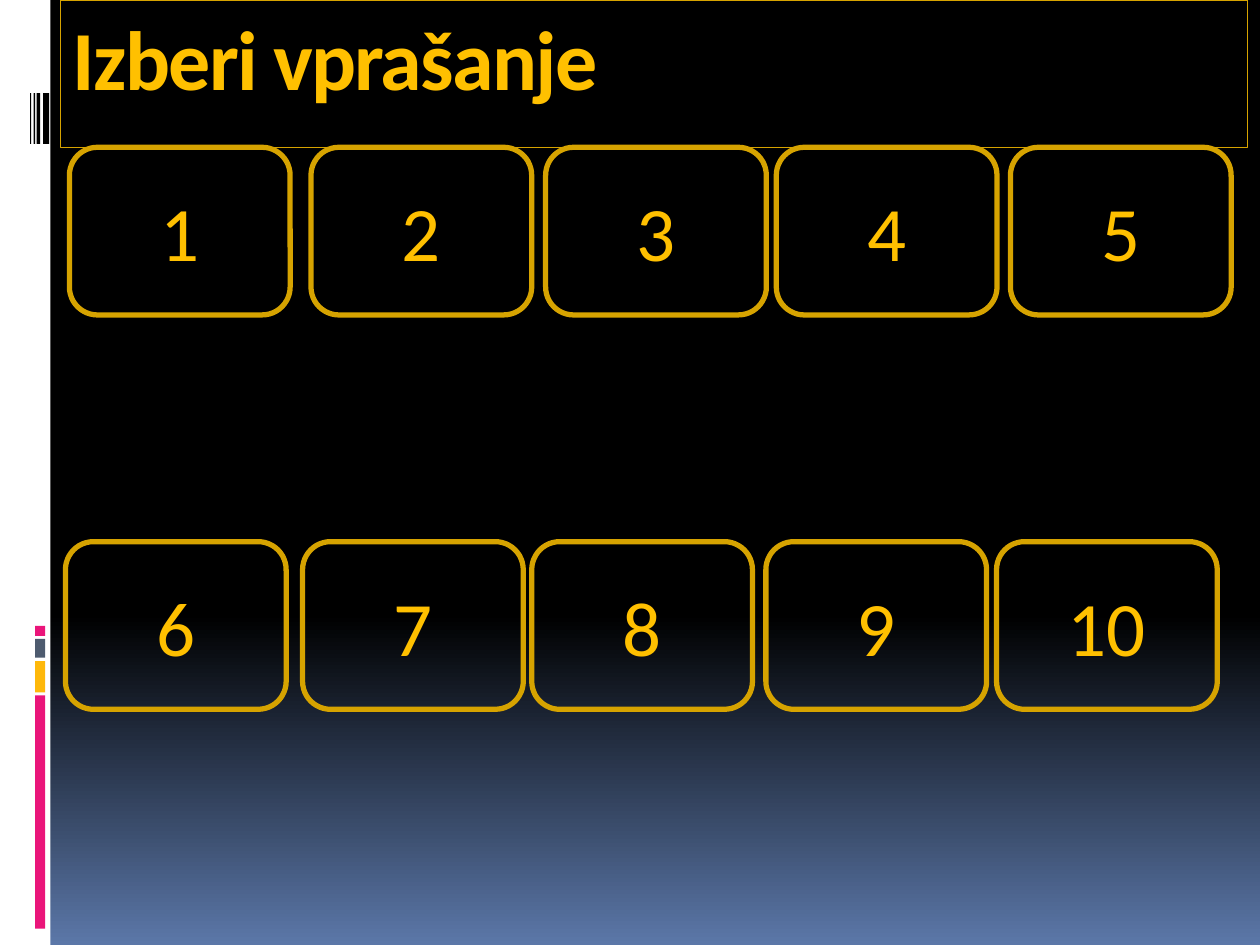
from pptx import Presentation
from pptx.dml.color import RGBColor
from pptx.enum.shapes import MSO_SHAPE
from pptx.enum.text import MSO_ANCHOR, PP_ALIGN
from pptx.util import Cm, Pt

RECT = MSO_SHAPE.RECTANGLE
ROUNDED = MSO_SHAPE.ROUNDED_RECTANGLE
CENTER = PP_ALIGN.CENTER
TOP, MIDDLE = MSO_ANCHOR.TOP, MSO_ANCHOR.MIDDLE

COLORS = {
    "black": "000000",
    "white": "FFFFFF",
    "blue": "5B77A8",
    "pink": "EA157A",
    "amber": "FEB80A",
    "slate": "4E5B6F",
    "gold": "FFC000",
    "border": "D6A300",
}
BLANK_LAYOUT = 6
FONT = "Calibri"


def color(name):
    return RGBColor.from_string(COLORS[name])


def paint_background(page):
    fill = page.background.fill
    fill.gradient()
    fill.gradient_angle = 270
    for stop, (position, name) in zip(
        fill.gradient_stops, [(0.65, "black"), (1, "blue")]
    ):
        stop.position = position
        stop.color.rgb = color(name)


def add_block(page, left, top, width, height, name):
    """Add a plain filled rectangle, measured in centimetres."""
    block = page.shapes.add_shape(RECT, Cm(left), Cm(top), Cm(width), Cm(height))
    block.shadow.inherit = False
    block.fill.solid()
    block.fill.fore_color.rgb = color(name)
    block.line.fill.background()


def add_outlined(page, kind, left, top, width, height, line_width):
    shape = page.shapes.add_shape(kind, Cm(left), Cm(top), Cm(width), Cm(height))
    shape.shadow.inherit = False
    shape.fill.background()
    shape.line.color.rgb = color("border")
    shape.line.width = Pt(line_width)
    return shape


def add_text(para, text, size, bold=False):
    span = para.add_run()
    span.text = text
    span.font.name = FONT
    span.font.size = Pt(size)
    span.font.bold = bold
    span.font.color.rgb = color("gold")
    return span


def add_side_strip(page, left, top, width, height):
    add_block(page, left, top, width, height, "white")
    for offset, bar_height, name in [
        (14.02, 4.7, "pink"),
        (13.33, 0.63, "amber"),
        (12.88, 0.38, "slate"),
        (12.62, 0.2, "pink"),
    ]:
        add_block(page, left + 0.71, top + offset, 0.2, bar_height, name)
    for offset, bar_width in [(0.87, 0.12), (0.74, 0.07), (0.68, 0.03), (0.61, 0.02)]:
        add_block(page, left + offset, top + 1.88, bar_width, 1.02, "black")


def add_title(page, left, top, width, height, text):
    title = add_outlined(page, RECT, left, top, width, height, 0.75)
    frame = title.text_frame
    frame.word_wrap = True
    frame.vertical_anchor = TOP
    para = frame.paragraphs[0]
    para.alignment = PP_ALIGN.LEFT
    span = add_text(para, text, 48, bold=True)
    span.font._element.set("spc", "-100")


def add_question_row(page, top, lefts, first_number):
    """Add one numbered button at each left edge."""
    for number, left in enumerate(lefts, first_number):
        button = add_outlined(page, ROUNDED, left, top, 4.45, 3.38, 3)
        button.adjustments[0] = 0.167
        frame = button.text_frame
        frame.word_wrap = False
        frame.vertical_anchor = MIDDLE
        para = frame.paragraphs[0]
        para.alignment = CENTER
        add_text(para, str(number), 44)


def main():
    deck = Presentation()
    deck.slide_width, deck.slide_height = Cm(25.4), Cm(19.05)
    page = deck.slides.add_slide(deck.slide_layouts[BLANK_LAYOUT])
    paint_background(page)
    add_side_strip(page, 0, 0, 1.02, 19.05)
    add_title(page, 1.22, 0, 23.93, 2.97, "Izberi vprašanje")
    add_question_row(page, 2.97, [1.4, 6.27, 11, 15.65, 20.37], 1)
    add_question_row(page, 10.92, [1.32, 6.1, 10.72, 15.44, 20.09], 6)
    deck.save("out.pptx")


if __name__ == "__main__":
    main()
